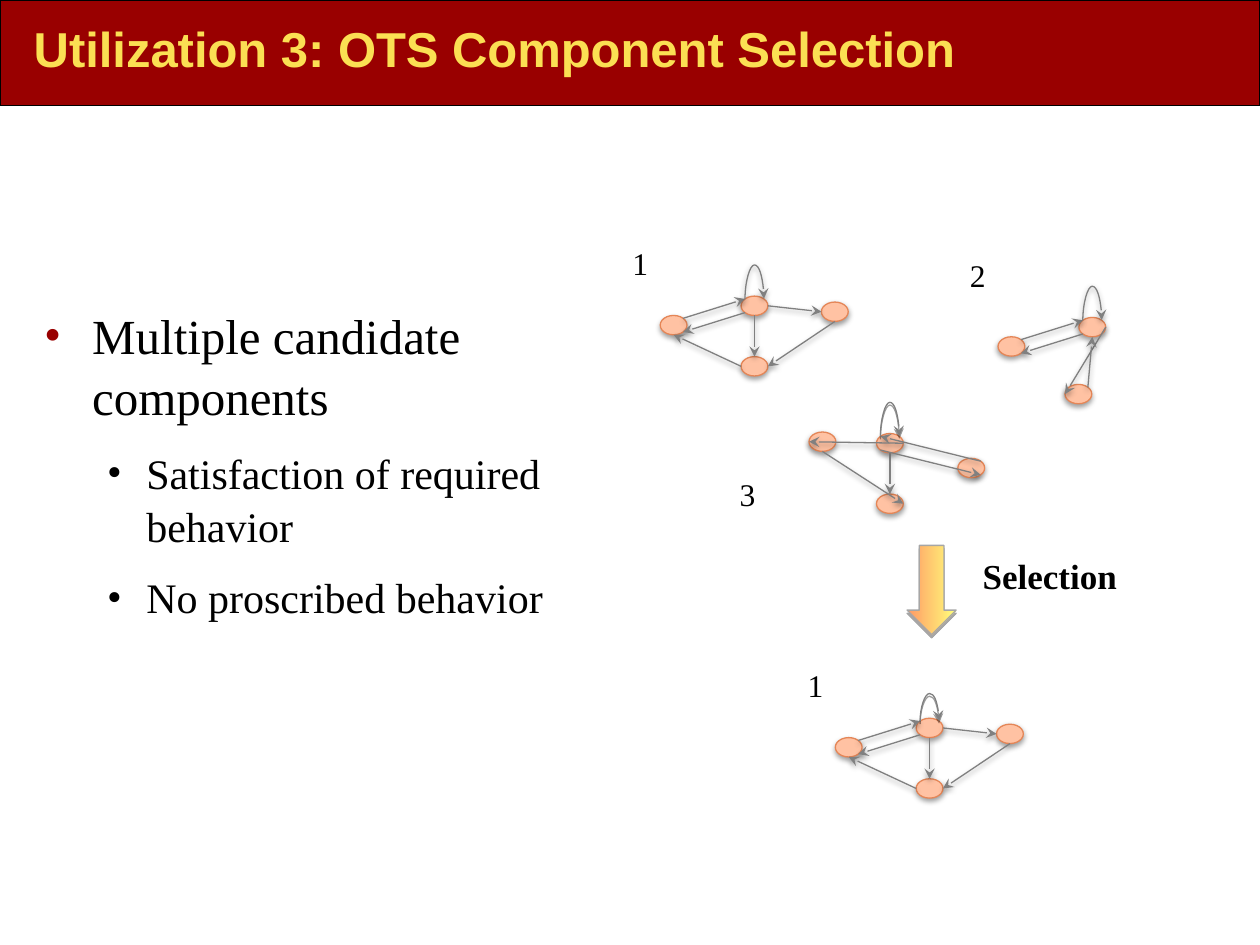
from lxml import etree
from pptx import Presentation
from pptx import util as u
from pptx.dml.color import RGBColor
from pptx.enum import shapes, text
from pptx.oxml.ns import qn

COLORS = {
    "banner": "990000", "title": "FBDF53", "ink": "000000",
    "node": "FFC2A3", "node_line": "E58657", "edge": "808080",
    "arrow_start": "FF9966", "arrow_end": "FFFF7A", "arrow_line": "A6A6A6",
}
SERIF = "Times New Roman"
NODE_W, NODE_H = 0.54, 0.39
DIAGONAL = 0.707
# Compass points on an ellipse, as fractions of its half width and half height
SITES = {
    "n": (0, -1), "e": (1, 0), "s": (0, 1), "w": (-1, 0),
    "ne": (DIAGONAL, -DIAGONAL), "nw": (-DIAGONAL, -DIAGONAL),
    "se": (DIAGONAL, DIAGONAL), "sw": (-DIAGONAL, DIAGONAL),
}
# Each component: node offsets inside its box, then edges as node.site pairs
DIAMOND = (
    {"left": (0, 0.39), "hub": (1.63, 0), "right": (3.25, 0.12), "low": (1.63, 1.22)},
    ["left.ne hub.nw", "hub.e right.w", "hub.s low.n", "hub.sw left.se",
     "right.s low.e", "low.w left.s"],
)
TRIANGLE = (
    {"left": (0, 0.39), "hub": (1.63, 0), "low": (1.35, 1.35)},
    ["left.ne hub.nw", "hub.e low.w", "hub.sw left.se", "low.ne hub.s"],
)
CROSSED = (
    {"left": (0, 0), "hub": (1.36, 0.03), "right": (3, 0.53), "low": (1.36, 1.25)},
    ["right.ne hub.nw", "hub.e left.w", "hub.s low.n", "hub.sw right.se",
     "left.s low.e"],
)


def rgb(name):
    return RGBColor.from_string(COLORS[name])


def cast_shadow(part, blur=3.1, distance=1.6, opacity=38):
    """Give a shape or connector a soft black shadow straight below it."""
    properties = part._element.spPr
    effects = properties.find(qn("a:effectLst"))
    if effects is None:
        effects = etree.SubElement(properties, qn("a:effectLst"))
    shadow = etree.SubElement(
        effects, qn("a:outerShdw"), blurRad=str(u.Pt(blur)),
        dist=str(u.Pt(distance)), dir="5400000", rotWithShape="0")
    black = etree.SubElement(shadow, qn("a:srgbClr"), val=COLORS["ink"])
    etree.SubElement(black, qn("a:alpha"), val=str(opacity * 1000))


def add_run(paragraph, words, size, font=SERIF, color="ink", bold=False):
    run = paragraph.add_run()
    run.text = words
    run.font.size = u.Pt(size)
    run.font.name = font
    run.font.bold = bold
    run.font.color.rgb = rgb(color)


def add_frame(slide, left, top, width, height):
    frame = slide.shapes.add_textbox(
        u.Cm(left), u.Cm(top), u.Cm(width), u.Cm(height)).text_frame
    frame.word_wrap = True
    return frame


def add_label(slide, words, left, top, width=1.63, height=0.94, size=18, bold=False):
    paragraph = add_frame(slide, left, top, width, height).paragraphs[0]
    paragraph.line_spacing = 0.9
    paragraph.space_after = u.Pt(6)
    add_run(paragraph, words, size, bold=bold)


def add_banner(slide, left, top, width, height):
    banner = slide.shapes.add_shape(
        shapes.MSO_SHAPE.RECTANGLE, u.Cm(left), u.Cm(top), u.Cm(width), u.Cm(height))
    banner.shadow.inherit = False
    banner.fill.solid()
    banner.fill.fore_color.rgb = rgb("banner")
    banner.line.color.rgb = rgb("ink")
    banner.line.width = u.Pt(0.75)
    title = add_frame(slide, left + 0.43, top - 0.1, 19.48, height)
    title.vertical_anchor = text.MSO_ANCHOR.MIDDLE
    add_run(title.paragraphs[0], "Utilization 3: OTS Component Selection",
            28, "Arial", "title", True)


def add_criteria(slide, left, top, width, height):
    frame = add_frame(slide, left, top, width, height)
    criteria = [(0, "Multiple candidate components"),
                (1, "Satisfaction of required behavior"),
                (1, "No proscribed behavior")]
    styles = [(28, 0.97, 0.97, "banner"), (24, 2.06, 0.79, "ink")]
    for index, (level, words) in enumerate(criteria):
        size, margin, hanging, bullet_color = styles[level]
        paragraph = frame.add_paragraph() if index else frame.paragraphs[0]
        paragraph.level = level
        properties = paragraph._p.get_or_add_pPr()
        properties.set("marL", str(u.Cm(margin)))
        properties.set("indent", str(-u.Cm(hanging)))
        bullet = etree.SubElement(properties, qn("a:buClr"))
        etree.SubElement(bullet, qn("a:srgbClr"), val=COLORS[bullet_color])
        etree.SubElement(properties, qn("a:buFont"), typeface=SERIF)
        etree.SubElement(properties, qn("a:buChar"), char="•")
        paragraph.line_spacing = 1.05
        paragraph.space_after = u.Pt(6)
        if index:
            paragraph.space_before = u.Pt(4.8)
        add_run(paragraph, words, size)


def add_edge(slide, start, end, kind=shapes.MSO_CONNECTOR.STRAIGHT, blur=3.1):
    edge = slide.shapes.add_connector(kind, *(u.Cm(v) for v in (*start, *end)))
    edge.line.color.rgb = rgb("edge")
    edge.line.width = u.Pt(0.75)
    etree.SubElement(edge.line._get_or_add_ln(), qn("a:tailEnd"), type="stealth")
    cast_shadow(edge, blur)
    return edge


def add_loop(slide, start, end, rise, blur):
    """Arch from start to end: a curved connector turned a quarter round."""
    center_x, half_span = (start[0] + end[0]) / 2, (end[0] - start[0]) / 2
    thickness = 0.01
    loop = add_edge(
        slide, (center_x + thickness / 2, start[1] + half_span),
        (center_x - thickness / 2, start[1] - half_span),
        shapes.MSO_CONNECTOR.CURVE, blur)
    properties = loop._element.spPr
    properties.find(qn("a:xfrm")).set("rot", "5400000")
    guides = properties.find(qn("a:prstGeom")).find(qn("a:avLst"))
    bend = round(rise / thickness * 100000)
    etree.SubElement(guides, qn("a:gd"), name="adj1", fmla=f"val {bend}")


def add_component(slide, left, top, component, rise=0.69, loop_blur=3.1):
    nodes, edges = component
    for x, y in nodes.values():
        node = slide.shapes.add_shape(
            shapes.MSO_SHAPE.OVAL, u.Cm(left + x), u.Cm(top + y),
            u.Cm(NODE_W), u.Cm(NODE_H))
        node.shadow.inherit = False
        node.fill.solid()
        node.fill.fore_color.rgb = rgb("node")
        node.line.color.rgb = rgb("node_line")
        node.line.width = u.Pt(0.75)
        cast_shadow(node)

    def site(place):
        name, compass = place.split(".")
        (x, y), (across, down) = nodes[name], SITES[compass]
        return (left + x + NODE_W / 2 * (1 + across),
                top + y + NODE_H / 2 * (1 + down))

    for edge in edges:
        add_edge(slide, *map(site, edge.split()))
    add_loop(slide, site("hub.nw"), site("hub.ne"), rise, loop_blur)


def add_selection_arrow(slide, left, top, length, breadth):
    arrow = slide.shapes.add_shape(
        shapes.MSO_SHAPE.RIGHT_ARROW, u.Cm(left), u.Cm(top), u.Cm(length), u.Cm(breadth))
    arrow.rotation = 90
    arrow.shadow.inherit = False
    arrow.fill.gradient()
    arrow.fill.gradient_angle = 90
    for stop, name in zip(arrow.fill.gradient_stops, ("arrow_start", "arrow_end")):
        stop.color.rgb = rgb(name)
    arrow.line.color.rgb = rgb("arrow_line")
    arrow.line.width = u.Pt(0.75)
    cast_shadow(arrow, 0, 1.8, 35)
    add_label(slide, "Selection", left + 1.68, top - 0.25, 4.34, 1.02, 20, True)


def main():
    deck = Presentation()
    deck.slide_width, deck.slide_height = u.Cm(25.4), u.Cm(19.05)
    slide = deck.slides.add_slide(deck.slide_layouts[6])
    add_banner(slide, 0, 0, 25.4, 2.13)
    add_criteria(slide, 0.64, 5.97, 11.43, 8.46)
    add_component(slide, 13.31, 5.97, DIAMOND)
    add_component(slide, 20.12, 6.4, TRIANGLE)
    add_component(slide, 16.31, 8.71, CROSSED, loop_blur=0)
    add_component(slide, 16.84, 14.48, DIAMOND, rise=0.56, loop_blur=0)
    for number, left, top in [("1", 12.5, 4.88), ("2", 19.3, 5.13),
                              ("3", 14.66, 9.53), ("1", 16.03, 13.39)]:
        add_label(slide, number, left, top)
    add_selection_arrow(slide, 17.88, 11.4, 1.8, 0.99)
    deck.save("out.pptx")


if __name__ == "__main__":
    main()
